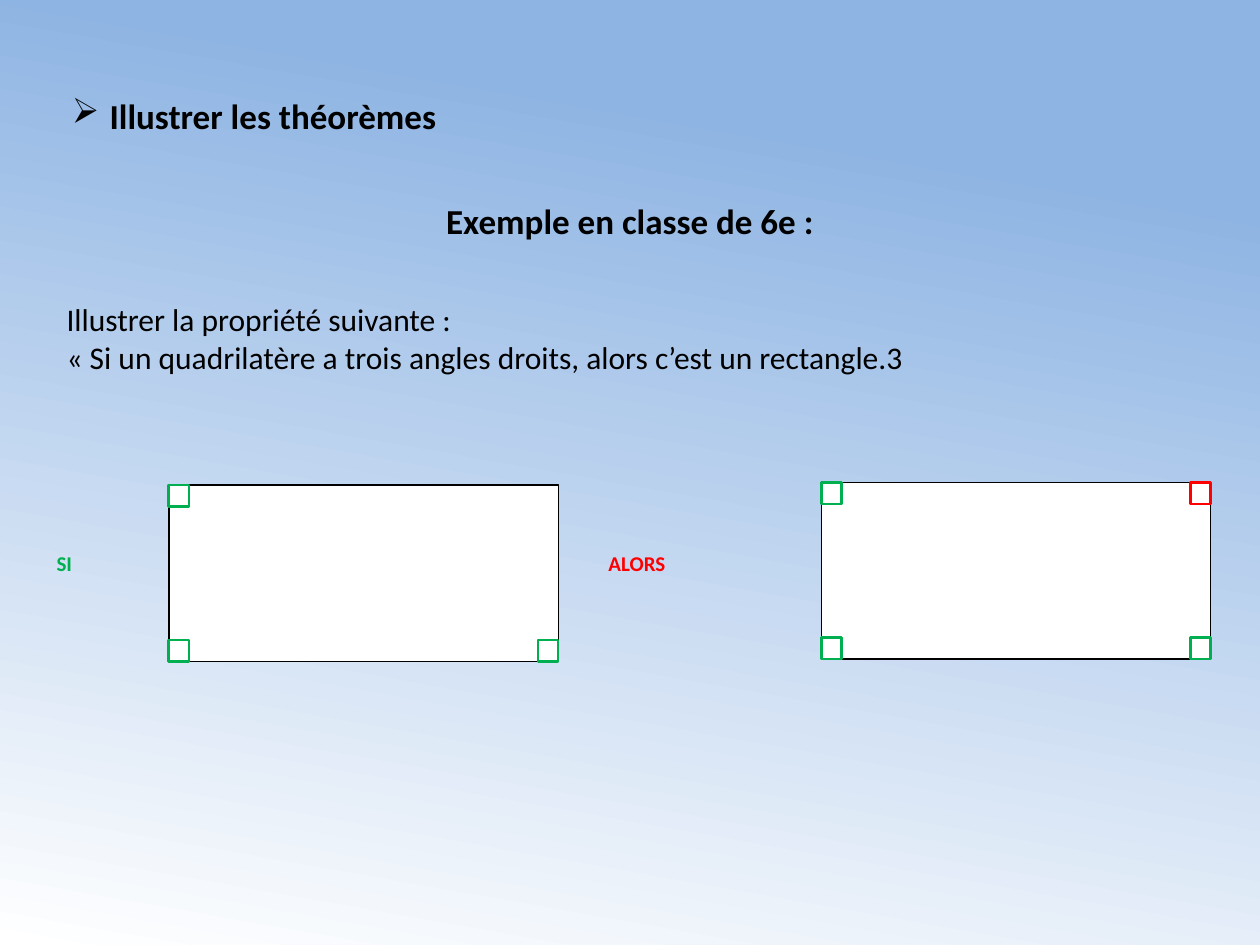
from pptx import Presentation
from pptx.dml.color import RGBColor
from pptx.enum.shapes import MSO_SHAPE
from pptx.enum.text import MSO_ANCHOR, MSO_AUTO_SIZE, PP_ALIGN
from pptx.oxml.ns import qn
from pptx.util import Inches, Pt
from lxml.etree import SubElement

THEME = dict(
    font="Calibri", black="000000", white="FFFFFF", sky="8EB4E3",
    green="00B050", red="FF0000", head=20, text=18, label=12,
)
TITLE = "Illustrer les théorèmes"
TEXTS = [
    (["Exemple en classe de 6e :"], (0.47, 1.23, 9.06, 0.74),
     dict(size="head", bold=True, align=PP_ALIGN.CENTER, anchor=MSO_ANCHOR.BOTTOM)),
    (["Illustrer la propriété suivante :",
      "« Si un quadrilatère a trois angles droits, alors c’est un rectangle.3"],
     (0.43, 2.33, 9.06, 0.71), {}),
    (["SI"], (0.35, 4.32, 0.65, 0.5),
     dict(size="label", color="green", bold=True, after=10)),
    (["ALORS"], (4.73, 4.32, 1.52, 0.5),
     dict(size="label", color="red", bold=True, after=10)),
]
FIGURES = [
    (1.34, 3.85, [(0, 0, "green"), (0, 1, "green"), (1, 1, "green")]),
    (6.52, 3.83, [(0, 0, "green"), (0, 1, "green"), (1, 1, "green"), (1, 0, "red")]),
]
WIDE, HIGH = 3.09, 1.4
MARK_W, MARK_H = 0.16, 0.17


def rgb(name):
    return RGBColor.from_string(THEME[name])


def write(frame, lines, size="text", color="black", bold=False,
          align=PP_ALIGN.LEFT, anchor=MSO_ANCHOR.TOP, after=0):
    frame.word_wrap = True
    frame.auto_size = MSO_AUTO_SIZE.NONE
    frame.vertical_anchor = anchor
    frame.text = "\n".join(lines)
    for para in frame.paragraphs:
        para.alignment = align
        para.space_after = Pt(after)
        font = para.runs[0].font
        font.name, font.size, font.bold = THEME["font"], Pt(THEME[size]), bold
        font.color.rgb = rgb(color)


def bullet(para, sign, indent):
    props = para._p.get_or_add_pPr()
    props.set("marL", str(Inches(indent)))
    props.set("indent", str(-Inches(indent)))
    SubElement(props, qn("a:buChar")).set("char", sign)


def box(group, x, y, w, h, color, weight):
    shape = group.shapes.add_shape(
        MSO_SHAPE.RECTANGLE, Inches(x), Inches(y), Inches(w), Inches(h))
    shape.shadow.inherit = False
    shape.fill.solid()
    shape.fill.fore_color.rgb = rgb("white")
    shape.line.color.rgb = rgb(color)
    shape.line.width = Pt(weight)


def figure(slide, x, y, marks):
    group = slide.shapes.add_group_shape()
    box(group, x, y, WIDE, HIGH, "black", 0.75)
    for col, row, color in marks:
        box(group, x + col * (WIDE - MARK_W), y + row * (HIGH - MARK_H),
            MARK_W, MARK_H, color, 1.5)


def paint(slide):
    fill = slide.background.fill
    fill.gradient()
    fill.gradient_angle = 260
    for stop, place, color in zip(fill.gradient_stops, (0.18, 1), ("sky", "white")):
        stop.position = place
        stop.color.rgb = rgb(color)


def main():
    deck = Presentation()
    deck.slide_width, deck.slide_height = Inches(10), Inches(7.5)
    slide = deck.slides.add_slide(deck.slide_layouts[5])
    paint(slide)

    title = slide.shapes.title
    title.left, title.top = Inches(0.47), Inches(0.29)
    title.width, title.height = Inches(9.06), Inches(1.25)
    write(title.text_frame, [TITLE], size="head", bold=True, anchor=MSO_ANCHOR.MIDDLE)
    bullet(title.text_frame.paragraphs[0], "➢", 0.3)

    for x, y, marks in FIGURES:
        figure(slide, x, y, marks)
    for lines, place, style in TEXTS:
        area = slide.shapes.add_textbox(*map(Inches, place))
        write(area.text_frame, lines, **style)
    deck.save("out.pptx")


if __name__ == "__main__":
    main()
